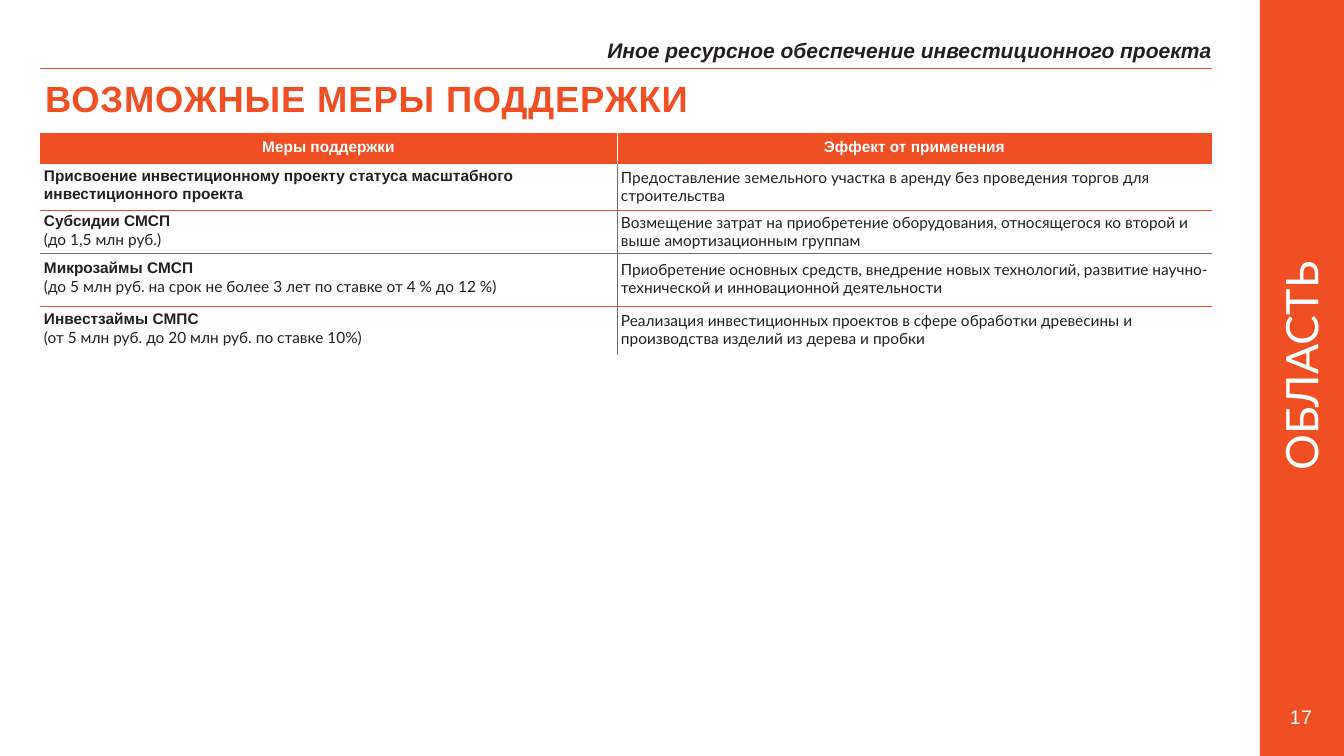
from dataclasses import dataclass
from lxml.etree import SubElement
from pptx import Presentation
from pptx.dml.color import RGBColor
from pptx.enum.shapes import MSO_CONNECTOR, MSO_SHAPE
from pptx.enum.text import MSO_ANCHOR, PP_ALIGN
from pptx.oxml import parse_xml
from pptx.oxml.ns import nsdecls, qn
from pptx.util import Pt

# Content
TOPIC = "Иное ресурсное обеспечение инвестиционного проекта"
TITLE = "ВОЗМОЖНЫЕ МЕРЫ ПОДДЕРЖКИ"
SIDE = "ОБЛАСТЬ"
PAGE = "17"
HEADS = ("Меры поддержки", "Эффект от применения")
# Measure, its terms, effect
ROWS = [
    ("Присвоение инвестиционному проекту статуса масштабного инвестиционного проекта", "",
     "Предоставление земельного участка в аренду без проведения торгов для строительства"),
    ("Субсидии СМСП", "(до 1,5 млн руб.)",
     "Возмещение затрат на приобретение оборудования, относящегося ко второй и "
     "выше амортизационным группам"),
    ("Микрозаймы СМСП", "(до 5 млн руб. на срок не более 3 лет по ставке от 4 % до 12 %)",
     "Приобретение основных средств, внедрение новых технологий, развитие "
     "научно-технической и инновационной деятельности"),
    ("Инвестзаймы СМПС", "(от 5 млн руб. до 20 млн руб. по ставке 10%)",
     "Реализация инвестиционных проектов в сфере обработки древесины и "
     "производства изделий из дерева и пробки"),
]


@dataclass(frozen=True)
class Theme:
    accent: str = "F04E23"
    ink: str = "231F20"
    white: str = "FFFFFF"
    rule: str = "6D6E71"
    head: str = "Arial"
    body: str = "Lato"
    title: int = 26
    topic: int = 15
    cell: int = 11
    side: int = 32
    page: int = 14
    line: float = 0.5


T = Theme()

# Layout in px
WIDE, HIGH = 1344, 756
LEFT, RIGHT, BAR = 40, 1212, 1260
TOP = 133
COLS = (577, 595)
TALL = (31, 46, 43, 53, 49)
INSET = (6, 4, 3, 7, 5)
# Line under each row: header, then the four measures
UNDER = (None, T.accent, T.rule, T.accent, None)


def px(n):
    return round(n * 914400 / 100.8)


def style(para, face, size, color, bold=False, italic=False):
    font = para.font
    font.name, font.size = face, Pt(size)
    font.bold, font.italic = bold, italic
    font.color.rgb = RGBColor.from_string(color)


def label(text, x, y, w, h, face, size, color, bold=False, italic=False,
          align=PP_ALIGN.LEFT, gap=0):
    box = slide.shapes.add_textbox(px(x), px(y), px(w), px(h))
    frame = box.text_frame
    frame.word_wrap = False
    frame.margin_left = frame.margin_right = frame.margin_bottom = 0
    frame.margin_top = px(1)
    para = frame.paragraphs[0]
    run = para.add_run()
    run.text = text
    para.alignment = align
    style(para, face, size, color, bold, italic)
    if gap:
        run.font._element.set("spc", str(gap))
    return box


def border(cell, edges):
    props = cell._tc.get_or_add_tcPr()
    spot = 0
    for side in "LRTB":
        color = edges.get(side)
        if color:
            line = parse_xml(
                f'<a:ln{side} {nsdecls("a")} w="{Pt(T.line)}"><a:solidFill>'
                f'<a:srgbClr val="{color}"/></a:solidFill></a:ln{side}>')
            props.insert(spot, line)
            spot += 1


deck = Presentation()
deck.slide_width, deck.slide_height = px(WIDE), px(HIGH)
slide = deck.slides.add_slide(deck.slide_layouts[6])

# Side bar with its word and page number
bar = slide.shapes.add_shape(MSO_SHAPE.RECTANGLE, px(BAR), 0, px(WIDE - BAR), px(HIGH))
bar.shadow.inherit = False
bar.fill.solid()
bar.fill.fore_color.rgb = RGBColor.from_string(T.accent)
bar.line.fill.background()
word = label(SIDE, 1180, 336, 240, 60, T.body, T.side, T.white, align=PP_ALIGN.CENTER)
word.text_frame.vertical_anchor = MSO_ANCHOR.MIDDLE
word.rotation = 270
label(PAGE, 1290, 704, 30, 26, T.head, T.page, T.white, gap=20)

# Topic, rule and title
label(TOPIC, 572, 37, RIGHT - 572, 28, T.head, T.topic, T.ink, True, True, PP_ALIGN.RIGHT)
rule = slide.shapes.add_connector(MSO_CONNECTOR.STRAIGHT, px(LEFT), px(68), px(RIGHT), px(68))
rule.line.color.rgb = RGBColor.from_string(T.accent)
rule.line.width = Pt(T.line)
SubElement(rule._element.spPr, qn("a:effectLst"))
label(TITLE, LEFT, 75, 654, 46, T.head, T.title, T.accent, True,
      align=PP_ALIGN.CENTER, gap=60)

# Table grid
grid = slide.shapes.add_table(len(TALL), len(COLS), px(LEFT), px(TOP),
                              px(sum(COLS)), px(sum(TALL))).table
grid.first_row = grid.horz_banding = False
grid._tbl.tblPr.find(qn("a:tableStyleId")).text = "{2D5ABB26-0587-4C30-8999-92F81FD0307C}"
for col, wide in zip(grid.columns, COLS):
    col.width = px(wide)
for row, tall in zip(grid.rows, TALL):
    row.height = px(tall)

# Table cells: each is a list of (text, bold) lines
lines = [[[(head, True)] for head in HEADS]]
for name, terms, effect in ROWS:
    first = [(name, True)] + ([(terms, False)] if terms else [])
    lines.append([first, [(effect, False)]])

for r, row in enumerate(lines):
    top = r == 0
    for c, parts in enumerate(row):
        cell = grid.cell(r, c)
        cell.margin_left = 0 if top else px(4)
        cell.margin_right = cell.margin_bottom = 0
        cell.margin_top = px(INSET[r])
        if top:
            cell.fill.solid()
            cell.fill.fore_color.rgb = RGBColor.from_string(T.accent)
        else:
            cell.fill.background()
        frame = cell.text_frame
        for i, (text, bold) in enumerate(parts):
            para = frame.add_paragraph() if i else frame.paragraphs[0]
            para.text = text
            para.alignment = PP_ALIGN.CENTER if top else PP_ALIGN.LEFT
            style(para, T.head if bold else T.body, T.cell, T.white if top else T.ink, bold)
        edges = {"L" if c else "R": T.white if top else T.rule, "B": UNDER[r]}
        if not top:
            edges["T"] = UNDER[r - 1]
        border(cell, edges)

deck.save("out.pptx")
